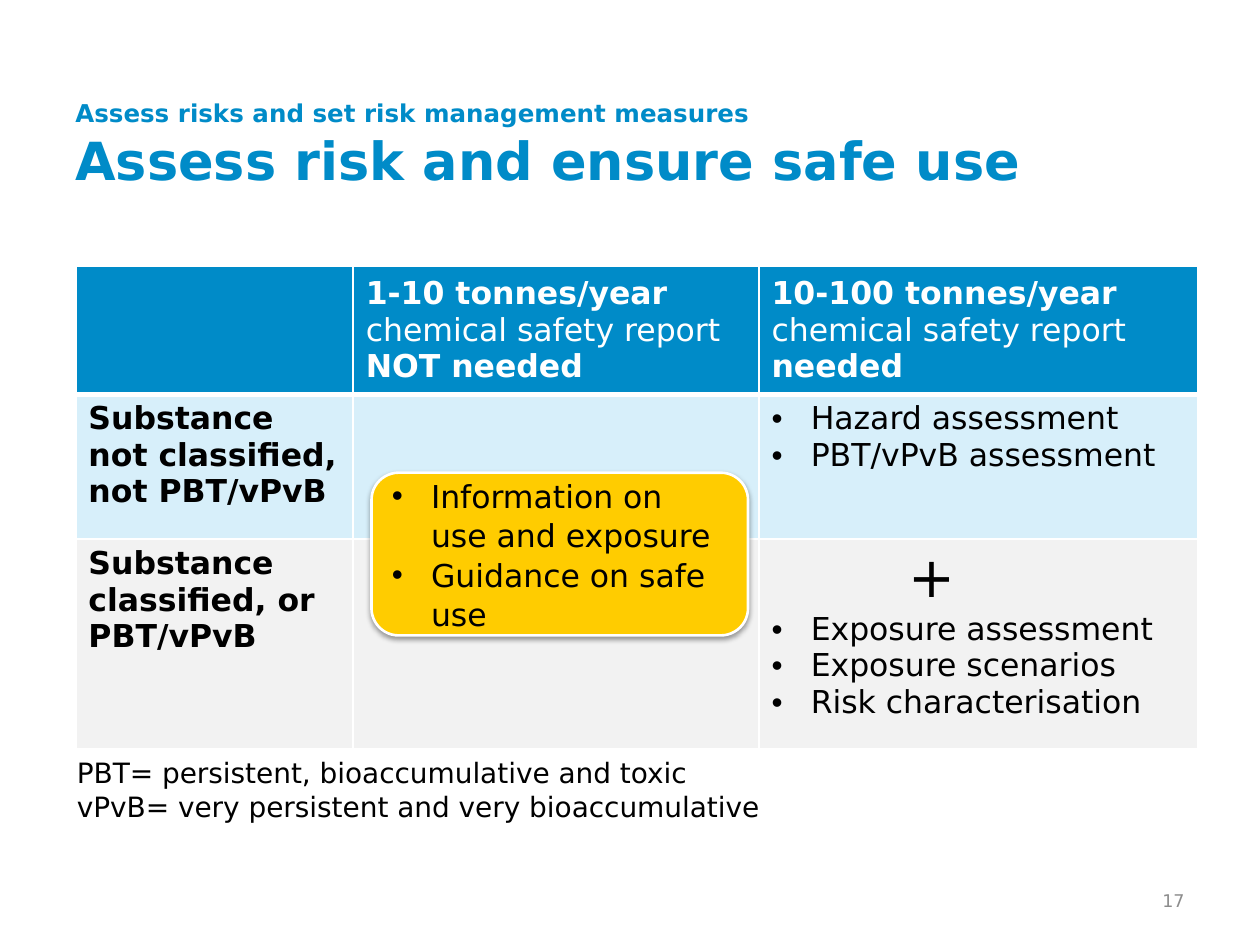
"""Build a slide that compares safety assessment duties by yearly tonnage."""
from dataclasses import dataclass
from typing import Any

import lxml.etree
import pptx
import pptx.dml.color
import pptx.enum.shapes
import pptx.enum.text
import pptx.oxml.ns
import pptx.util

Cm = pptx.util.Cm
Pt = pptx.util.Pt
Anchor = pptx.enum.text.MSO_ANCHOR
Align = pptx.enum.text.PP_ALIGN

FONT = "DejaVu Sans"
COLOURS = {
    "blue": "008BC8",
    "pale_blue": "D7EFFA",
    "pale_grey": "F2F2F2",
    "yellow": "FFCC00",
    "white": "FFFFFF",
    "black": "000000",
    "grey": "8C8C8C",
}
BULLET_INDENT = Cm(0.79)


@dataclass(frozen=True)
class Run:
    text: str
    bold: bool = False
    size: float = 18
    colour: str = "black"
    break_after: bool = False


@dataclass(frozen=True)
class Line:
    runs: tuple[Run, ...]
    bullet: bool = False
    indent: int = 0
    align: Any = Align.LEFT
    spacing: float = 1.0


@dataclass(frozen=True)
class TextBox:
    left: float
    top: float
    width: float
    height: float
    lines: tuple[Line, ...]
    anchor: Any = Anchor.TOP


def colour_of(name: str) -> pptx.dml.color.RGBColor:
    """Return the named colour."""
    return pptx.dml.color.RGBColor.from_string(COLOURS[name])


def add_element(parent: Any, tag: str, **attributes: str) -> Any:
    """Append a drawing element to its parent."""
    return lxml.etree.SubElement(parent, pptx.oxml.ns.qn(tag), attributes)


def bullets(*texts: str, spacing: float = 1.0) -> tuple[Line, ...]:
    """Return one bulleted line per text."""
    return tuple(Line((Run(text),), bullet=True, spacing=spacing) for text in texts)


def heading(tonnage: str, verdict: str) -> tuple[Line, ...]:
    """Return the lines of a column heading."""
    return (
        Line((Run(tonnage, True, colour="white"),)),
        Line((Run("chemical safety report ", colour="white"), Run(verdict, True, colour="white"))),
    )


def write_lines(frame: Any, lines: tuple[Line, ...]) -> None:
    """Fill a text frame run by run."""
    frame.word_wrap = True
    for index, line in enumerate(lines):
        paragraph = frame.paragraphs[0] if index == 0 else frame.add_paragraph()
        paragraph.alignment = line.align
        properties = paragraph._p.get_or_add_pPr()
        if line.bullet:
            properties.set("marL", str(BULLET_INDENT))
            properties.set("indent", str(-BULLET_INDENT))
            add_element(properties, "a:buFont", typeface="Arial")
            add_element(properties, "a:buChar", char="•")
        elif line.indent:
            properties.set("marL", str(line.indent))
        paragraph.line_spacing = line.spacing
        for item in line.runs:
            run = paragraph.add_run()
            run.text = item.text
            run.font.name = FONT
            run.font.size = Pt(item.size)
            run.font.bold = item.bold
            run.font.color.rgb = colour_of(item.colour)
            if item.break_after:
                paragraph.add_line_break()


def add_text(slide: Any, box: TextBox) -> None:
    """Add a text box."""
    shape = slide.shapes.add_textbox(Cm(box.left), Cm(box.top), Cm(box.width), Cm(box.height))
    write_lines(shape.text_frame, box.lines)
    shape.text_frame.vertical_anchor = box.anchor


def style_cell(cell: Any, fill: str, bottom_width: float) -> None:
    """Give a cell white borders and a plain fill."""
    properties = cell._tc.get_or_add_tcPr()
    for side, width in {"L": 1, "R": 1, "T": 1, "B": bottom_width}.items():
        border = add_element(properties, f"a:ln{side}", w=str(Pt(width)))
        add_element(add_element(border, "a:solidFill"), "a:srgbClr", val=COLOURS["white"])
    cell.fill.solid()
    cell.fill.fore_color.rgb = colour_of(fill)


def add_duties_table(slide: Any) -> None:
    """Add the table of duties by tonnage and classification."""
    widths, heights = (5.59, 8.18, 8.84), (2.59, 2.92, 4.22)
    fills = ("blue", "pale_blue", "pale_grey")
    contents = (
        ((), heading("1-10 tonnes/year", "NOT needed"), heading("10-100 tonnes/year ", "needed")),
        (
            (
                Line((Run("Substance ", True, break_after=True), Run("not classified,", True))),
                Line((Run("not PBT/vPvB", True),)),
            ),
            (),
            bullets("Hazard assessment", "PBT/vPvB assessment"),
        ),
        (
            (Line((Run("Substance classified, or", True),)), Line((Run("PBT/vPvB", True),))),
            (),
            (Line((Run("+", size=32),), indent=Cm(2.77)),)
            + bullets("Exposure assessment", "Exposure scenarios", "Risk characterisation"),
        ),
    )
    table = slide.shapes.add_table(
        3, 3, Cm(1.53), Cm(5.36), Cm(sum(widths)), Cm(sum(heights))
    ).table
    for column, width in zip(table.columns, widths):
        column.width = Cm(width)
    for row_index, (row, height) in enumerate(zip(table.rows, heights)):
        row.height = Cm(height)
        is_header = row_index == 0
        for cell, lines in zip(row.cells, contents[row_index]):
            style_cell(cell, fills[row_index], 3 if is_header else 1)
            cell.vertical_anchor = Anchor.MIDDLE if is_header else Anchor.TOP
            write_lines(cell.text_frame, lines)


def add_shared_duties(slide: Any) -> None:
    """Add the rounded box that spans both substance rows."""
    shape = slide.shapes.add_shape(
        pptx.enum.shapes.MSO_SHAPE.ROUNDED_RECTANGLE, Cm(7.49), Cm(9.53), Cm(7.59), Cm(3.28)
    )
    shape.fill.solid()
    shape.fill.fore_color.rgb = colour_of("yellow")
    shape.line.color.rgb = colour_of("white")
    shape.line.width = Pt(1.5)
    shape.shadow.inherit = False
    effects = shape._element.spPr.find(pptx.oxml.ns.qn("a:effectLst"))
    shadow = add_element(
        effects, "a:outerShdw", blurRad=str(Pt(3.1)), dist=str(Pt(1.6)),
        dir="5400000", rotWithShape="0",
    )
    shade = add_element(shadow, "a:srgbClr", val=COLOURS["black"])
    add_element(shade, "a:alpha", val="38000")
    lines = bullets("Information on use and exposure", "Guidance on safe use", spacing=1.04)
    write_lines(shape.text_frame, lines)
    shape.text_frame.vertical_anchor = Anchor.MIDDLE


def main() -> None:
    """Build and save the presentation."""
    presentation = pptx.Presentation()
    presentation.slide_width, presentation.slide_height = Cm(25.4), Cm(19.05)
    slide = presentation.slides.add_slide(presentation.slide_layouts[6])
    title = Line((
        Run("Assess risks and set risk management measures", True, 14, "blue", True),
        Run("Assess risk and ensure safe use", True, 30, "blue"),
    ))
    abbreviations = tuple(Line((Run(text, size=16),)) for text in (
        "PBT= persistent, bioaccumulative and toxic",
        "vPvB= very persistent and very bioaccumulative",
    ))
    number = Line((Run("17", size=10, colour="grey"),), align=Align.RIGHT)
    add_text(slide, TextBox(18.21, 17.65, 5.92, 1.02, (number,), Anchor.MIDDLE))
    add_text(slide, TextBox(1.27, 1.32, 22.86, 3.18, (title,), Anchor.MIDDLE))
    add_duties_table(slide)
    add_text(slide, TextBox(1.3, 15.11, 18.75, 1.63, abbreviations))
    add_shared_duties(slide)
    presentation.save("out.pptx")


if __name__ == "__main__":
    main()
